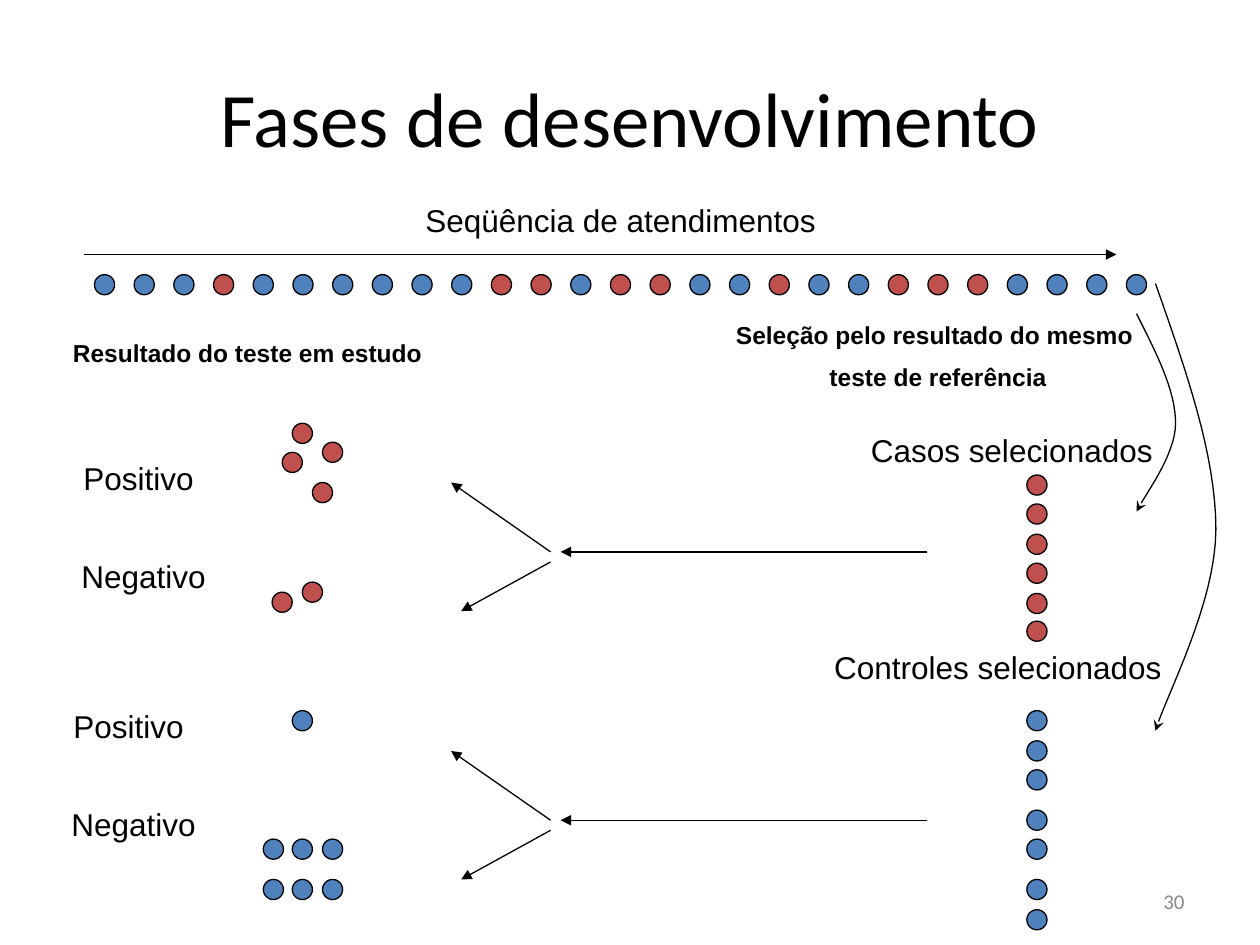
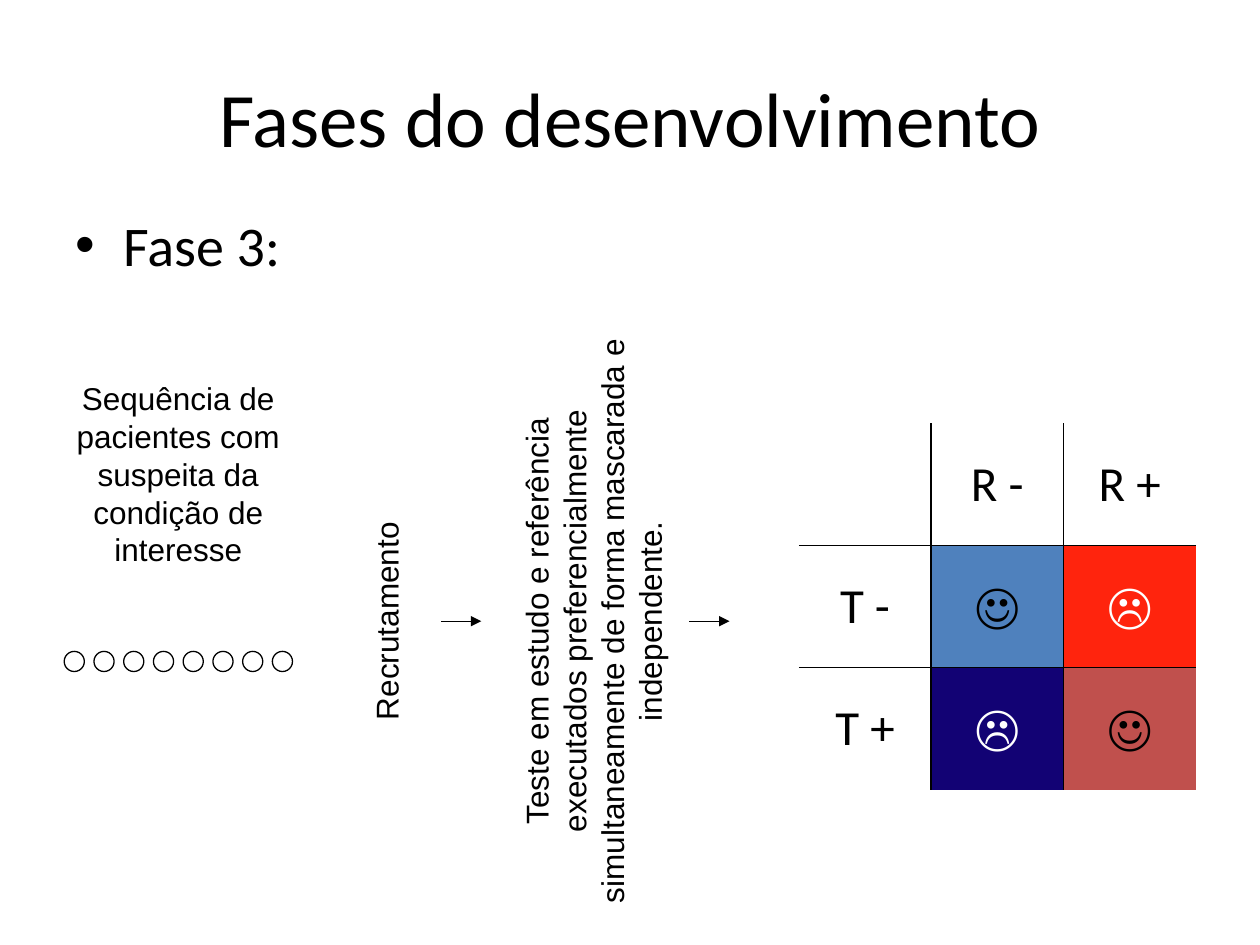
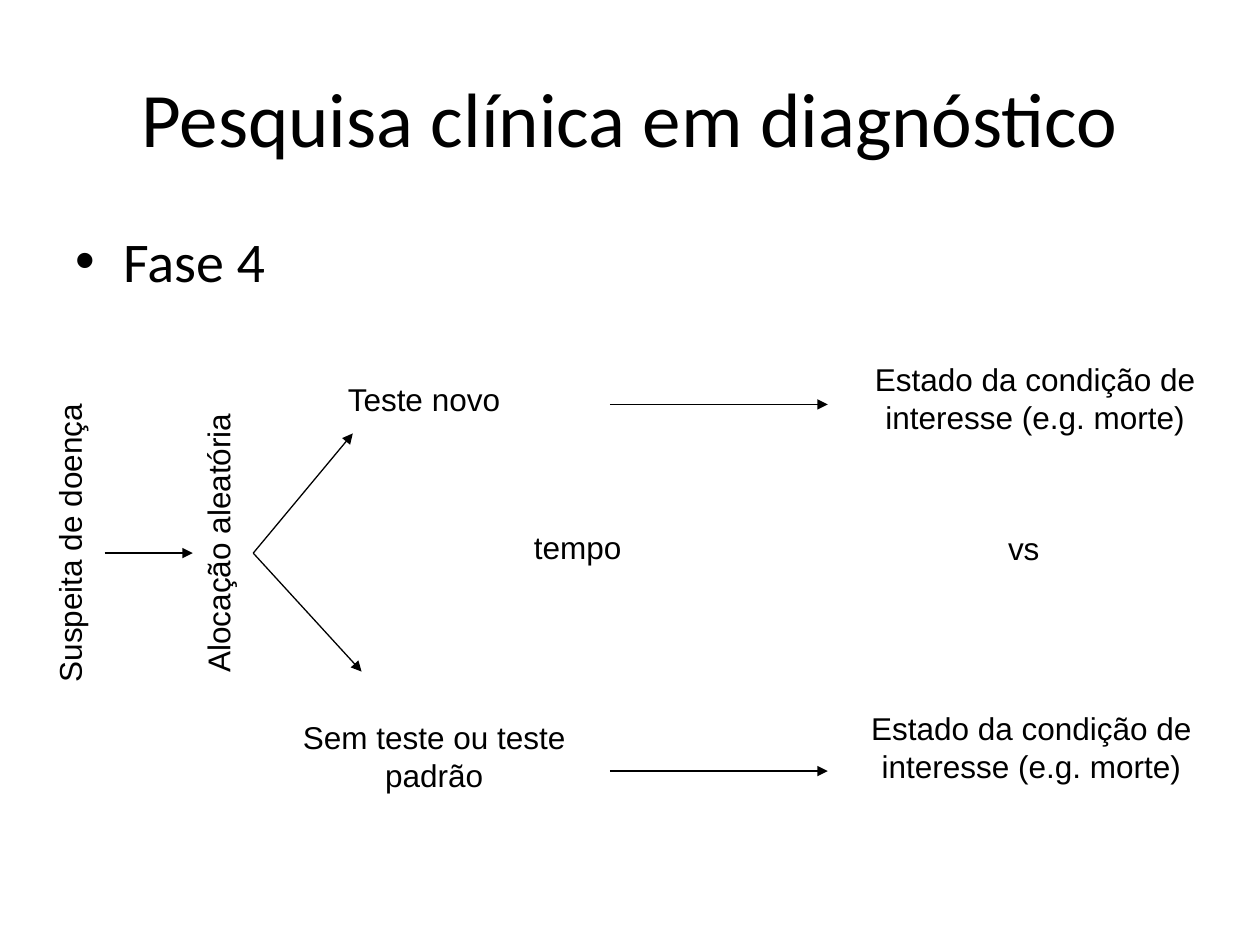
"""Build three slides on the phases of diagnostic test research."""
import dataclasses

import pptx
import pptx.dml.color
import pptx.enum.shapes
import pptx.enum.text
import pptx.oxml
import pptx.oxml.ns
import pptx.util

Inches = pptx.util.Inches
Pt = pptx.util.Pt
ALIGN = pptx.enum.text.PP_ALIGN
ANCHOR = pptx.enum.text.MSO_ANCHOR
SHAPE = pptx.enum.shapes.MSO_SHAPE


@dataclasses.dataclass(frozen=True)
class Theme:
    black: str = "000000"
    white: str = "FFFFFF"
    gray: str = "898989"
    blue: str = "4F81BD"
    red: str = "C0504D"
    bright_red: str = "FF240D"
    navy: str = "120274"
    heading_font: str = "Calibri"
    label_font: str = "Arial"
    title_size: float = 44
    bullet_size: float = 32
    table_size: float = 28
    label_size: float = 18
    caption_size: float = 14
    number_size: float = 12
    line_width: float = 0.75
    border_width: float = 1
    dot: float = 0.16


THEME = Theme()

PHASES_TITLE = "Fases de desenvolvimento"
PAGE_NUMBER = "30"
PATIENTS = "BBBRBBBBBBRRBRRBBRBBRRRBBBB"
PATIENT_COLORS = {"B": THEME.blue, "R": THEME.red}
PHASES_LABELS = [
    ("Seqüência de atendimentos ", (1.85, 1.55, 6.22, 0.4)),
    ("Casos selecionados", (6.81, 3.37, 2.44, 0.4)),
    ("Controles selecionados", (6.5, 5.09, 2.84, 0.4)),
    ("Positivo", (0.51, 3.59, 1.18, 0.4)),
    ("Negativo", (0.51, 4.37, 1.26, 0.4)),
    ("Positivo", (0.43, 5.56, 1.18, 0.4)),
    ("Negativo", (0.43, 6.34, 1.26, 0.4)),
]
PHASES_CAPTIONS = [
    (["Seleção pelo resultado do mesmo ", "teste de referência"], (5.71, 2.49, 3.47, 0.68)),
    (["Resultado do teste em estudo"], (0.43, 2.63, 3.07, 0.33)),
]
CASE_TOPS = [3.77, 4, 4.24, 4.47, 4.71, 4.93]
CONTROL_TOPS = [5.64, 5.88, 6.11, 6.43, 6.66, 6.98, 7.22]
SELECTED_LEFT = 8.15
CASE_RESULTS = [(2.32, 3.36), (2.24, 3.59), (2.48, 3.83), (2.56, 3.51), (2.4, 4.62), (2.16, 4.7)]
CONTROL_RESULTS = [(2.32, 5.64)] + [(x, y) for y in (6.66, 6.98) for x in (2.09, 2.32, 2.56)]
BRANCH_TOPS = [4.38, 6.51]
BRANCH_ARROWS = [
    ((7.36, 0), (4.45, 0)),
    ((4.37, 0), (3.58, -0.55)),
    ((4.37, 0.08), (3.66, 0.47)),
]
SELECTION_CURVES = [
    [(9.02, 2.49), (9.17, 2.79), (9.33, 3.09), (9.33, 3.36),
     (9.33, 3.62), (9.07, 3.95), (9.02, 4.06)],
    [(9.17, 2.25), (9.41, 2.93), (9.65, 3.61), (9.65, 4.2),
     (9.65, 4.79), (9.25, 5.53), (9.17, 5.8)],
]
CURVE_STEPS = 16

PHASE_3_TITLE = "Fases do desenvolvimento"
PHASE_3_BULLET = ("Fase 3:", (0.5, 1.62, 9, 0.52))
PHASE_3_LABELS = [
    ("Sequência de pacientes com suspeita da condição de interesse", (0.35, 2.96, 2.13, 1.62), 0),
    ("Recrutamento", (2.04, 4.73, 2.05, 0.4), 270),
    ("Teste em estudo e referência executados preferencialmente simultaneamente "
     "de forma mascarada e independente.", (2.34, 4.28, 4.73, 1.3), 270),
]
PHASE_3_ARROWS = [((3.5, 4.93), (3.82, 4.93)), ((5.47, 4.93), (5.79, 4.93))]
SUSPECT_COUNT = 8
RESULT_TABLE = [
    [("", None, THEME.black), ("R -", None, THEME.black), ("R +", None, THEME.black)],
    [("T -", None, THEME.black), ("☺", THEME.blue, THEME.black),
     ("☹", THEME.bright_red, THEME.white)],
    [("T +", None, THEME.black), ("☹", THEME.navy, THEME.white),
     ("☺", THEME.red, THEME.black)],
]
RESULT_TABLE_BOX = (6.34, 3.36, 3.15, 2.91)

PHASE_4_TITLE = "Pesquisa clínica em diagnóstico"
PHASE_4_BULLET = ("Fase 4", (0.5, 1.75, 9, 0.58))
OUTCOME = "Estado da condição de interesse (e.g. morte)"
PHASE_4_LABELS = [
    ("Suspeita de doença", (-1.26, 4.11, 3.62, 0.4), 270),
    ("Alocação aleatória", (-0.08, 4.11, 3.62, 0.4), 270),
    ("Teste novo", (2.01, 2.97, 2.71, 0.4), 0),
    ("Sem teste ou teste padrão", (2.09, 5.65, 2.71, 0.7), 0),
    ("tempo", (3.23, 4.14, 2.71, 0.4), 0),
    (OUTCOME, (6.78, 2.81, 2.87, 0.7), 0),
    ("vs", (6.77, 4.15, 2.71, 0.4), 0),
    (OUTCOME, (6.73, 5.58, 2.91, 0.7), 0),
]
PHASE_4_ARROWS = [
    ((0.83, 4.39), (1.53, 4.39)),
    ((2.01, 4.39), (2.8, 3.44)),
    ((2.01, 4.39), (2.87, 5.33)),
    ((4.84, 3.21), (6.57, 3.21)),
    ((4.84, 6.12), (6.57, 6.12)),
]


def rgb(color):
    return pptx.dml.color.RGBColor.from_string(color)


def add_element(parent, tag, **attributes):
    element = pptx.oxml.parse_xml(f"<a:{tag} {pptx.oxml.ns.nsdecls('a')}/>")
    for name, value in attributes.items():
        element.set(name, str(value))
    parent.append(element)
    return element


def add_run(paragraph, text, size, font=THEME.label_font, color=THEME.black, bold=False):
    run = paragraph.add_run()
    run.text = text
    run.font.size = Pt(size)
    run.font.name = font
    run.font.bold = bold
    run.font.color.rgb = rgb(color)


def add_text(slide, lines, box, size=THEME.label_size, align=ALIGN.CENTER,
             anchor=ANCHOR.TOP, rotation=0, **style):
    shape = slide.shapes.add_textbox(*map(Inches, box))
    shape.rotation = rotation
    frame = shape.text_frame
    frame.word_wrap = True
    frame.vertical_anchor = anchor
    for index, line in enumerate(lines):
        paragraph = frame.add_paragraph() if index else frame.paragraphs[0]
        paragraph.alignment = align
        if index:
            paragraph.space_before = Pt(size / 2)
        add_run(paragraph, line, size, **style)
    return shape


def add_bullet(slide, text, box):
    shape = add_text(slide, [text], box, THEME.bullet_size, ALIGN.LEFT, font=THEME.heading_font)
    properties = shape.text_frame.paragraphs[0]._p.get_or_add_pPr()
    properties.set("marL", str(Inches(0.38)))
    properties.set("indent", str(-Inches(0.38)))
    add_element(properties, "buFont", typeface=THEME.label_font)
    add_element(properties, "buChar", char="•")


def style_line(shape, head=None):
    shape.line.color.rgb = rgb(THEME.black)
    shape.line.width = Pt(THEME.line_width)
    if head:
        line = shape.element.spPr.find(pptx.oxml.ns.qn("a:ln"))
        add_element(line, "tailEnd", type=head)


def add_dot(slide, left, top, color=None):
    dot = slide.shapes.add_shape(SHAPE.OVAL, *map(Inches, (left, top, THEME.dot, THEME.dot)))
    dot.shadow.inherit = False
    if color:
        dot.fill.solid()
        dot.fill.fore_color.rgb = rgb(color)
    else:
        dot.fill.background()
    style_line(dot)


def add_arrow(slide, start, end):
    arrow = slide.shapes.add_connector(
        pptx.enum.shapes.MSO_CONNECTOR.STRAIGHT, *map(Inches, start + end))
    style_line(arrow, "triangle")
    add_element(arrow.element.spPr, "effectLst")


def bezier_point(points, t):
    weights = ((1 - t) ** 3, 3 * t * (1 - t) ** 2, 3 * t ** 2 * (1 - t), t ** 3)
    return tuple(Inches(sum(w * p[axis] for w, p in zip(weights, points))) for axis in (0, 1))


def add_curve(slide, points):
    trail = [bezier_point(points[first:first + 4], step / CURVE_STEPS)
             for first in range(0, len(points) - 1, 3) for step in range(1, CURVE_STEPS + 1)]
    builder = slide.shapes.build_freeform(*map(Inches, points[0]))
    builder.add_line_segments(trail, close=False)
    curve = builder.convert_to_shape()
    curve.shadow.inherit = False
    curve.fill.background()
    style_line(curve, "stealth")


def add_border(cell, side, visible):
    line = add_element(cell._tc.get_or_add_tcPr(), f"ln{side}", w=Pt(THEME.border_width))
    if visible:
        add_element(add_element(line, "solidFill"), "srgbClr", val=THEME.black)
    else:
        add_element(line, "noFill")


def add_result_table(slide):
    last = len(RESULT_TABLE) - 1
    table = slide.shapes.add_table(last + 1, last + 1, *map(Inches, RESULT_TABLE_BOX)).table
    table.first_row = table.horz_banding = False
    for row, entries in enumerate(RESULT_TABLE):
        for column, (text, fill, color) in enumerate(entries):
            cell = table.cell(row, column)
            cell.vertical_anchor = ANCHOR.MIDDLE
            inner = {"L": column > 0, "R": column < last, "T": row > 0, "B": row < last}
            for side, visible in inner.items():
                add_border(cell, side, visible)
            if fill:
                cell.fill.solid()
                cell.fill.fore_color.rgb = rgb(fill)
            else:
                cell.fill.background()
            if text:
                paragraph = cell.text_frame.paragraphs[0]
                paragraph.alignment = ALIGN.CENTER
                add_run(paragraph, text, THEME.table_size, THEME.heading_font, color)


def add_slide(presentation, title):
    slide = presentation.slides.add_slide(presentation.slide_layouts[6])
    add_text(slide, [title], (0.5, 0.3, 9, 1.25), THEME.title_size,
             anchor=ANCHOR.MIDDLE, font=THEME.heading_font)
    return slide


def build_phases(presentation):
    slide = add_slide(presentation, PHASES_TITLE)
    add_text(slide, [PAGE_NUMBER], (7.17, 6.95, 2.33, 0.4), THEME.number_size, ALIGN.RIGHT,
             ANCHOR.MIDDLE, font=THEME.heading_font, color=THEME.gray)
    for text, box in PHASES_LABELS:
        add_text(slide, [text], box)
    for lines, box in PHASES_CAPTIONS:
        add_text(slide, lines, box, THEME.caption_size, bold=True)
    add_arrow(slide, (0.67, 2.02), (8.86, 2.02))
    for index, patient in enumerate(PATIENTS):
        add_dot(slide, 0.75 + index * 0.315, 2.18, PATIENT_COLORS[patient])
    for tops, results, color in ((CASE_TOPS, CASE_RESULTS, THEME.red),
                                 (CONTROL_TOPS, CONTROL_RESULTS, THEME.blue)):
        for left, top in [(SELECTED_LEFT, top) for top in tops] + results:
            add_dot(slide, left, top, color)
    for top in BRANCH_TOPS:
        for (start_x, start_y), (end_x, end_y) in BRANCH_ARROWS:
            add_arrow(slide, (start_x, top + start_y), (end_x, top + end_y))
    for points in SELECTION_CURVES:
        add_curve(slide, points)


def build_flow(presentation, title, bullet, labels, arrows):
    slide = add_slide(presentation, title)
    add_bullet(slide, *bullet)
    for text, box, rotation in labels:
        add_text(slide, [text], box, rotation=rotation)
    for start, end in arrows:
        add_arrow(slide, start, end)
    return slide


def main():
    presentation = pptx.Presentation()
    presentation.slide_width = Inches(10)
    presentation.slide_height = Inches(7.5)
    build_phases(presentation)
    phase_3 = build_flow(presentation, PHASE_3_TITLE, PHASE_3_BULLET,
                         PHASE_3_LABELS, PHASE_3_ARROWS)
    for index in range(SUSPECT_COUNT):
        add_dot(phase_3, 0.51 + index * 0.236, 5.17)
    add_result_table(phase_3)
    build_flow(presentation, PHASE_4_TITLE, PHASE_4_BULLET, PHASE_4_LABELS, PHASE_4_ARROWS)
    presentation.save("out.pptx")


if __name__ == "__main__":
    main()
